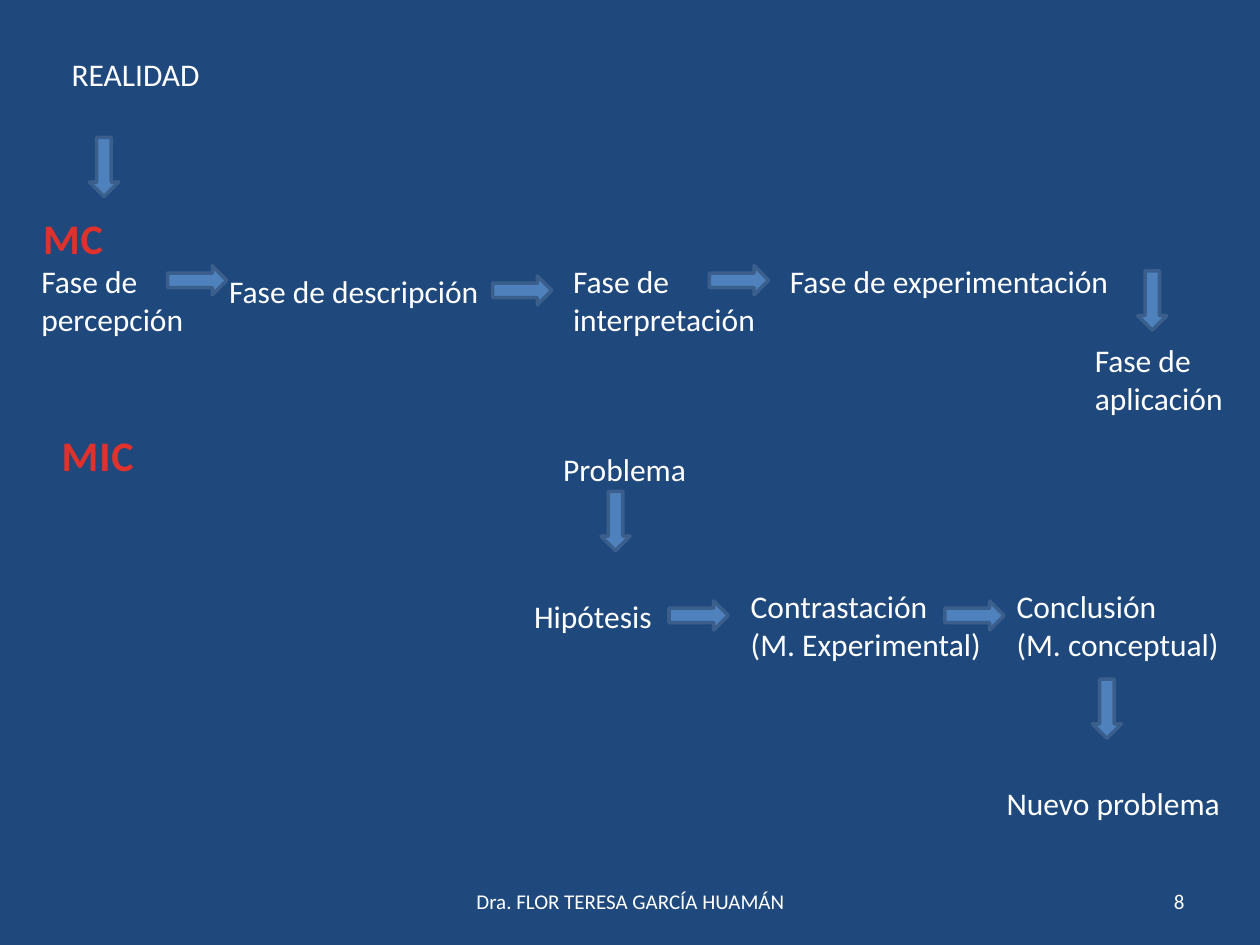
from dataclasses import dataclass

from pptx import Presentation
from pptx.dml.color import RGBColor
from pptx.enum.shapes import MSO_SHAPE
from pptx.enum.text import MSO_ANCHOR as Anchor, MSO_AUTO_SIZE as AutoSize, PP_ALIGN as Align
from pptx.util import Inches, Pt

COLUMNS, ROWS = 100, 75
ARROW_LENGTH, ARROW_BREADTH = 4.7, 2.3
RIGHT, DOWN = 0, 90


@dataclass(frozen=True)
class Theme:
    """Colours, font and type sizes of the slide."""
    background: str = "1F497D"
    text: str = "FFFFFF"
    arrow: str = "4F81BD"
    arrow_edge: str = "3A5F8C"
    heading: tuple = ((0.25, "E0322D"), (1, "A2201C"))
    font: str = "Calibri"
    phase_size: int = 18
    heading_size: int = 24
    footer_size: int = 12


THEME = Theme()

PHASES = [
    ("REALIDAD", (4.7, 3.9, 12.3, 4)),
    ("Fase de percepción", (2.3, 20.3, 15.6, 7.1)),
    ("Fase de descripción", (17.2, 21.1, 25, 4)),
    ("Fase de interpretación", (44.5, 20.3, 18, 7.1)),
    ("Fase de experimentación", (61.7, 20.3, 27.3, 4)),
    ("Fase de aplicación", (85.9, 26.6, 14.1, 7.1)),
    ("Problema", (43.7, 35.2, 14.8, 4)),
    ("Hipótesis", (41.4, 46.9, 14.1, 4)),
    ("Contrastación\n(M. Experimental)", (58.6, 46.1, 21.9, 7.1)),
    ("Conclusión\n(M. conceptual)", (79.7, 46.1, 20.3, 7.1)),
    ("Nuevo problema", (78.9, 61.7, 21.1, 4)),
]
HEADINGS = [("MC", (2.3, 16.4, 7, 5)), ("MIC", (2.3, 33.6, 10.9, 5))]
FOOTERS = [
    ("8", (71.7, 69.5, 23.3, 4), Align.RIGHT),
    ("Dra. FLOR TERESA GARCÍA HUAMÁN", (34.2, 69.5, 31.7, 4), Align.CENTER),
]
ARROWS = [
    (5.9, 12.1, DOWN), (13.3, 21.1, RIGHT), (39.1, 21.9, RIGHT),
    (56.3, 21.1, RIGHT), (89.1, 22.7, DOWN), (46.5, 40.2, DOWN),
    (53.1, 47.7, RIGHT), (75, 47.7, RIGHT), (85.5, 55.1, DOWN),
]


def rgb(value):
    """Turn a hex string into a colour."""
    return RGBColor.from_string(value)


def apply_format(target, values):
    """Set each named attribute on the target."""
    for name, value in values.items():
        setattr(target, name, value)


def place(prs, cells):
    """Convert left, top, width and height from grid cells to slide lengths."""
    column, row = prs.slide_width / COLUMNS, prs.slide_height / ROWS
    return [round(cell * unit) for cell, unit in zip(cells, (column, row) * 2)]


def add_label(prs, slide, wording, cells, size, align=Align.LEFT, **frame_format):
    """Add a text box and return its runs."""
    frame = slide.shapes.add_textbox(*place(prs, cells)).text_frame
    apply_format(frame, {"text": wording, "word_wrap": True,
                         "auto_size": AutoSize.SHAPE_TO_FIT_TEXT, **frame_format})
    runs = []
    for paragraph in frame.paragraphs:
        paragraph.alignment = align
        for run in paragraph.runs:
            apply_format(run.font, {"name": THEME.font, "size": Pt(size)})
            run.font.color.rgb = rgb(THEME.text)
            runs.append(run)
    return runs


def add_heading(prs, slide, wording, cells):
    """Add a bold, slightly spaced method heading with a gradient fill."""
    for run in add_label(prs, slide, wording, cells, THEME.heading_size, Align.CENTER):
        run.font.bold = True
        fill = run.font.fill
        fill.gradient()
        fill.gradient_angle = 270
        for stop, (position, colour) in zip(fill.gradient_stops, THEME.heading):
            stop.position = position
            stop.color.rgb = rgb(colour)
        run.font._element.set("spc", "50")


def add_arrow(prs, slide, column, row, rotation):
    """Add a block arrow leading to the next phase."""
    cells = (column, row, ARROW_LENGTH, ARROW_BREADTH)
    arrow = slide.shapes.add_shape(MSO_SHAPE.RIGHT_ARROW, *place(prs, cells))
    arrow.rotation = rotation
    arrow.shadow.inherit = False
    arrow.fill.solid()
    arrow.fill.fore_color.rgb = rgb(THEME.arrow)
    arrow.line.color.rgb = rgb(THEME.arrow_edge)
    arrow.line.width = Pt(2)


def main():
    """Build and save the slide."""
    prs = Presentation()
    apply_format(prs, {"slide_width": Inches(10), "slide_height": Inches(7.5)})
    slide = prs.slides.add_slide(prs.slide_layouts[6])
    background = slide.background.fill
    background.solid()
    background.fore_color.rgb = rgb(THEME.background)

    for wording, cells in PHASES:
        add_label(prs, slide, wording, cells, THEME.phase_size)
    for column, row, rotation in ARROWS:
        add_arrow(prs, slide, column, row, rotation)
    for wording, cells in HEADINGS:
        add_heading(prs, slide, wording, cells)
    for wording, cells, align in FOOTERS:
        add_label(prs, slide, wording, cells, THEME.footer_size, align,
                  auto_size=AutoSize.NONE, vertical_anchor=Anchor.MIDDLE)
    prs.save("out.pptx")


if __name__ == "__main__":
    main()
